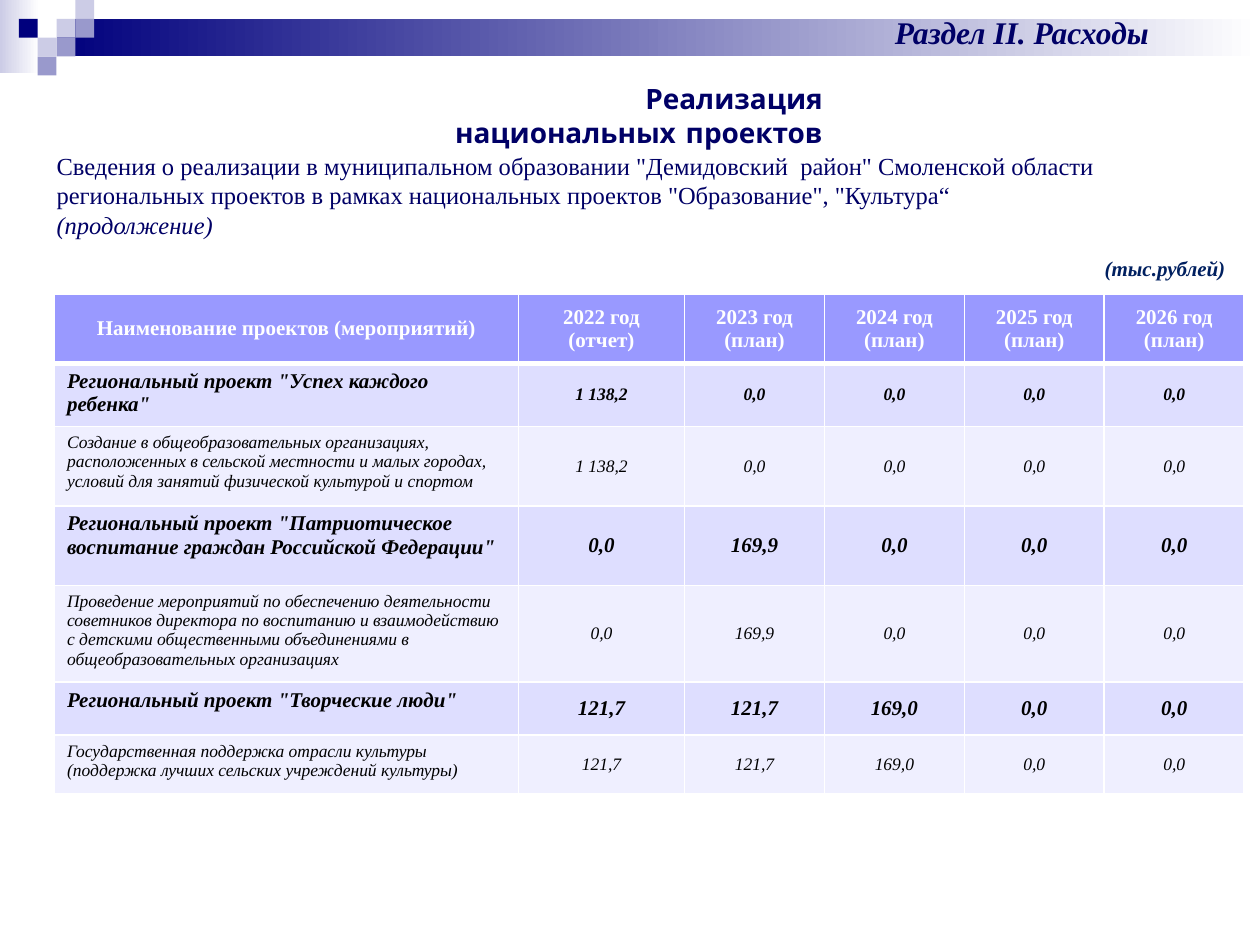
from dataclasses import dataclass

from lxml.etree import SubElement
from pptx import Presentation
from pptx.dml.color import RGBColor
from pptx.enum.shapes import MSO_SHAPE
from pptx.enum.text import MSO_ANCHOR, PP_ALIGN
from pptx.oxml.ns import qn
from pptx.util import Cm, Pt


@dataclass(frozen=True)
class Theme:
    serif: str = "Times New Roman"
    title_font: str = "Comic Neue"
    ink: str = "000066"
    unit_ink: str = "002060"
    navy: str = "00007D"
    pale: str = "CCCCE6"
    lilac: str = "9999CC"
    white: str = "FFFFFF"
    black: str = "000000"
    header_fill: str = "9999FF"
    project_fill: str = "DEDEFF"
    measure_fill: str = "EFEFFF"
    section_size: int = 18
    title_size: int = 16
    intro_size: int = 14
    project_size: int = 12
    measure_size: int = 10


THEME = Theme()
SQUARE = 0.38
# column, row and colour of each square in the corner mosaic
MOSAIC = [
    (2, 1, THEME.pale), (3, 0, THEME.pale), (3, 1, THEME.lilac),
    (1, 2, THEME.pale), (0, 1, THEME.navy), (2, 2, THEME.lilac),
    (1, 3, THEME.lilac),
]
COLUMN_WIDTHS = [9.35, 3.35] + [2.82] * 4
ROW_HEIGHTS = [1.4, 0.79, 1.6, 1.6, 1.83, 1.07, 1.17]
HEADER = ["Наименование проектов (мероприятий)", "2022 год\n(отчет)"] + [
    f"{year} год\n(план)" for year in range(2023, 2027)
]
# name, values by year, is a project, size of the values
ROWS = [
    ('Региональный проект "Успех каждого ребенка"',
     ["1 138,2", "0,0", "0,0", "0,0", "0,0"], True, THEME.measure_size),
    ("Создание в общеобразовательных организациях, расположенных в сельской "
     "местности и малых городах, условий для занятий физической культурой и спортом",
     ["1 138,2", "0,0", "0,0", "0,0", "0,0"], False, THEME.measure_size),
    ('Региональный проект "Патриотическое воспитание граждан Российской Федерации"',
     ["0,0", "169,9", "0,0", "0,0", "0,0"], True, THEME.project_size),
    ("Проведение мероприятий по обеспечению деятельности советников директора "
     "по воспитанию и взаимодействию с детскими общественными объединениями "
     "в общеобразовательных организациях",
     ["0,0", "169,9", "0,0", "0,0", "0,0"], False, THEME.measure_size),
    ('Региональный проект "Творческие люди"',
     ["121,7", "121,7", "169,0", "0,0", "0,0"], True, THEME.project_size),
    ("Государственная поддержка отрасли культуры "
     "(поддержка лучших сельских учреждений культуры)",
     ["121,7", "121,7", "169,0", "0,0", "0,0"], False, THEME.measure_size),
]


def style_font(font, size, color, name=THEME.serif, bold=False, italic=False):
    font.size, font.name = Pt(size), name
    font.bold, font.italic = bold, italic
    font.color.rgb = RGBColor.from_string(color)


def add_block(page, left, top, width, height, *colors):
    """Add a rectangle: one colour fills it, two make a left-to-right gradient."""
    block = page.shapes.add_shape(
        MSO_SHAPE.RECTANGLE, Cm(left), Cm(top), Cm(width), Cm(height))
    block.shadow.inherit = False
    block.line.fill.background()
    if len(colors) == 1:
        block.fill.solid()
        block.fill.fore_color.rgb = RGBColor.from_string(colors[0])
        return
    block.fill.gradient()
    block.fill.gradient_angle = 0
    for stop, position, color in zip(block.fill.gradient_stops, (0, 1), colors):
        stop.position = position
        stop.color.rgb = RGBColor.from_string(color)


def add_banner(page):
    add_block(page, 0, 0, 0.79, 1.47, THEME.pale, THEME.white)
    add_block(page, 1.14, SQUARE, 24.26, 0.76, THEME.navy, THEME.white)
    for column, row, color in MOSAIC:
        add_block(page, SQUARE * (column + 1), SQUARE * row, SQUARE, SQUARE, color)


def add_text(page, left, top, width, height, text, size, color=THEME.ink,
             align=PP_ALIGN.LEFT, wrap=True, **style):
    """Add a text box and return its paragraph."""
    box = page.shapes.add_textbox(Cm(left), Cm(top), Cm(width), Cm(height))
    box.text_frame.word_wrap = wrap
    para = box.text_frame.paragraphs[0]
    para.alignment = align
    para.add_run().text = text
    style_font(para.font, size, color, **style)
    return para


def add_intro(page):
    para = add_text(
        page, 0.89, 2.92, 24.41, 1.45,
        'Сведения о реализации в муниципальном образовании "Демидовский  район" '
        "Смоленской области региональных проектов в рамках национальных проектов "
        '"Образование", "Культура“', THEME.intro_size)
    para.add_line_break()
    span = para.add_run()
    span.text = "(продолжение)"
    span.font.italic = True


def set_borders(cell, top, bottom):
    """Draw white borders, with the top and bottom widths given in points."""
    properties = cell._tc.get_or_add_tcPr()
    widths = {"a:lnL": 1, "a:lnR": 1, "a:lnT": top, "a:lnB": bottom}
    for index, (tag, width) in enumerate(widths.items()):
        line = SubElement(properties, qn(tag), w=str(Pt(width)))
        fill = SubElement(line, qn("a:solidFill"))
        SubElement(fill, qn("a:srgbClr"), val=THEME.white)
        properties.insert(index, line)


def fill_cell(cell, text, fill, size, color=THEME.black, centered=True,
              top=1, bottom=1, **style):
    cell.fill.solid()
    cell.fill.fore_color.rgb = RGBColor.from_string(fill)
    set_borders(cell, top, bottom)
    cell.vertical_anchor = MSO_ANCHOR.MIDDLE if centered else MSO_ANCHOR.TOP
    cell.text = text
    for para in cell.text_frame.paragraphs:
        para.alignment = PP_ALIGN.CENTER if centered else PP_ALIGN.LEFT
        style_font(para.font, size, color, **style)


def add_projects_table(page):
    table = page.shapes.add_table(
        len(ROW_HEIGHTS), len(COLUMN_WIDTHS), Cm(1.1), Cm(5.93),
        Cm(sum(COLUMN_WIDTHS)), Cm(sum(ROW_HEIGHTS))).table
    table.horz_banding = False
    for column, width in zip(table.columns, COLUMN_WIDTHS):
        column.width = Cm(width)
    for row, height in zip(table.rows, ROW_HEIGHTS):
        row.height = Cm(height)
    for column, heading in enumerate(HEADER):
        fill_cell(table.cell(0, column), heading, THEME.header_fill,
                  THEME.project_size, THEME.white, bottom=3, bold=True)
    for row, (name, values, is_project, value_size) in enumerate(ROWS, start=1):
        fill = THEME.project_fill if is_project else THEME.measure_fill
        name_size = THEME.project_size if is_project else THEME.measure_size
        for column, text in enumerate([name, *values]):
            fill_cell(table.cell(row, column), text, fill,
                      value_size if column else name_size,
                      centered=column > 0, top=3 if row == 1 else 1,
                      bold=is_project, italic=True)


def main():
    deck = Presentation()
    deck.slide_width, deck.slide_height = Cm(25.4), Cm(19.05)
    page = deck.slides.add_slide(deck.slide_layouts[6])
    add_banner(page)
    add_text(page, 15.9, 0.13, 9.4, 1.02, "Раздел II. Расходы", THEME.section_size,
             align=PP_ALIGN.CENTER, bold=True, italic=True)
    add_text(page, 8.51, 1.52, 8.33, 0.94, "Реализация национальных проектов",
             THEME.title_size, align=PP_ALIGN.RIGHT, name=THEME.title_font, bold=True)
    add_intro(page)
    add_projects_table(page)
    add_text(page, 22.02, 5.03, 2.97, 0.76, "(тыс.рублей)", THEME.project_size,
             THEME.unit_ink, wrap=False, bold=True, italic=True)
    deck.save("out.pptx")


if __name__ == "__main__":
    main()
